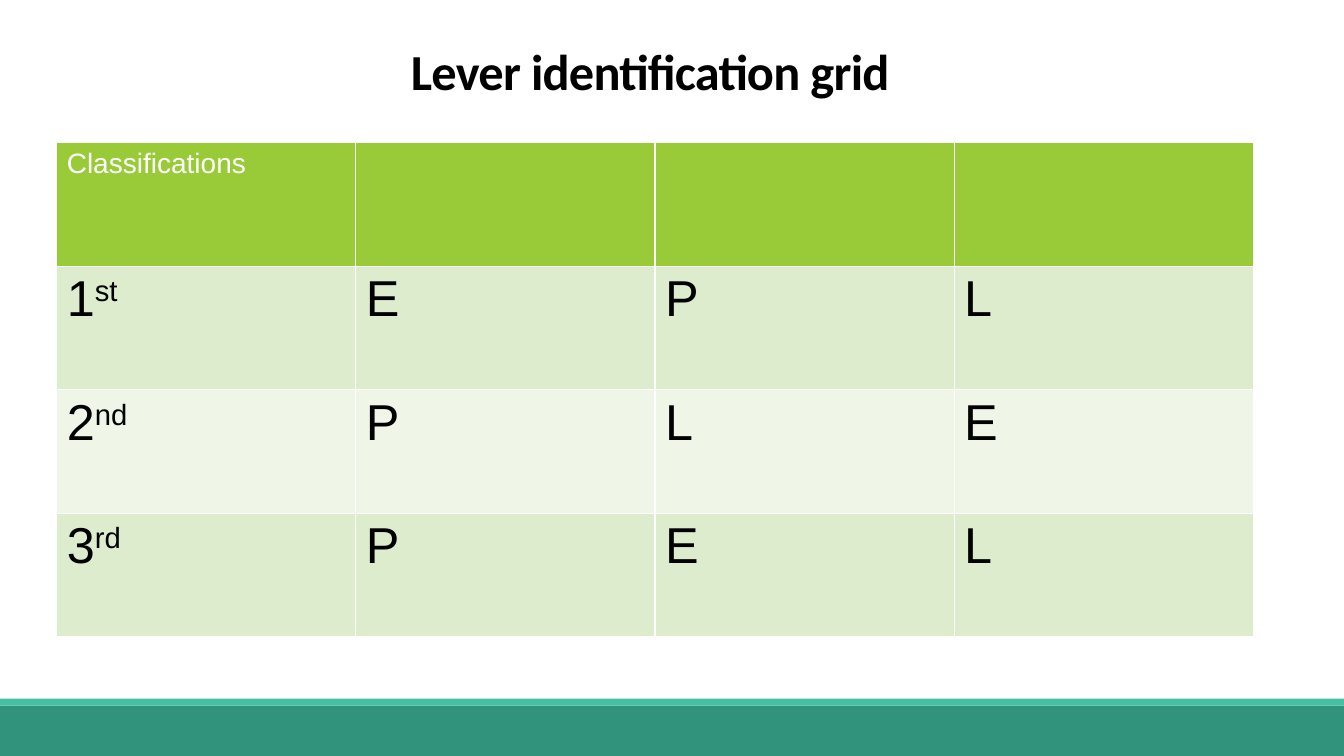
from lxml.etree import SubElement
from pptx import Presentation
from pptx.dml.color import RGBColor as RGB
from pptx.enum.shapes import MSO_SHAPE as Shape
from pptx.enum.text import MSO_ANCHOR as Anchor, PP_ALIGN as Align
from pptx.oxml.ns import qn
from pptx.util import Pt

COLORS = {
    "white": "FFFFFF", "black": "000000",
    "band": "31937B", "stripe": "44C1A3",
    "head": "99CB38", "odd": "DEECCE", "even": "EFF6E8",
}
WIDTH, HEIGHT = 960, 540
GRID = [
    ["Classifications", "", "", ""],
    [("1", "st"), "E", "P", "L"],
    [("2", "nd"), "P", "L", "E"],
    [("3", "rd"), "P", "E", "L"],
]


def color(name):
    return RGB.from_string(COLORS[name])


def add_title(slide, text, left, top, width, height):
    title = slide.shapes.title
    title.left, title.top = Pt(left), Pt(top)
    title.width, title.height = Pt(width), Pt(height)
    frame = title.text_frame
    frame.text = text
    frame.word_wrap = True
    frame.vertical_anchor = Anchor.BOTTOM
    para = frame.paragraphs[0]
    para.alignment = Align.CENTER
    para.line_spacing = 0.85
    font = para.runs[0].font
    font.name, font.size, font.bold = "Calibri", Pt(36), True
    font.color.rgb = color("black")
    para.runs[0]._r.get_or_add_rPr().set("spc", "-50")


def add_footer(slide, left, top, width, height, stripe=5):
    """Draw the bottom band with a thin stripe along its top."""
    parts = [("band", top + stripe, height - stripe), ("stripe", top, stripe)]
    for name, y, tall in parts:
        bar = slide.shapes.add_shape(
            Shape.RECTANGLE, Pt(left), Pt(y), Pt(width), Pt(tall))
        bar.shadow.inherit = False
        bar.fill.solid()
        bar.fill.fore_color.rgb = color(name)
        bar.line.fill.background()


def set_border(cell):
    props = cell._tc.get_or_add_tcPr()
    for side in ("lnL", "lnR", "lnT", "lnB"):
        line = SubElement(props, qn("a:" + side), w=str(Pt(1)))
        fill = SubElement(line, qn("a:solidFill"))
        SubElement(fill, qn("a:srgbClr"), val=COLORS["white"])


def fill_cell(cell, value, size, ink, back):
    """Style a cell; a pair of strings is a base and its superscript."""
    set_border(cell)
    cell.fill.solid()
    cell.fill.fore_color.rgb = color(back)
    base, above = value if isinstance(value, tuple) else (value, "")
    cell.text_frame.text = base
    para = cell.text_frame.paragraphs[0]
    if above:
        run = para.add_run()
        run.text = above
        run._r.get_or_add_rPr().set("baseline", "30000")
    para.font.size = Pt(size)
    for run in para.runs:
        run.font.name, run.font.size = "Arial", Pt(size)
        run.font.color.rgb = color(ink)


def add_grid(slide, rows, left, top, width, height):
    table = slide.shapes.add_table(
        len(rows), len(rows[0]),
        Pt(left), Pt(top), Pt(width), Pt(height)).table
    for r, row in enumerate(rows):
        if r == 0:
            style = (20, "white", "head")
        else:
            style = (36, "black", "odd" if r % 2 else "even")
        for c, value in enumerate(row):
            fill_cell(table.cell(r, c), value, *style)


def main():
    deck = Presentation()
    deck.slide_width, deck.slide_height = Pt(WIDTH), Pt(HEIGHT)
    slide = deck.slides.add_slide(deck.slide_layouts[5])
    add_footer(slide, 0, 499, WIDTH, HEIGHT - 499)
    add_title(slide, "Lever identification grid", 126, 7.2, 676.8, 68.4)
    add_grid(slide, GRID, 40.5, 102, 854.8, 352.8)
    deck.save("out.pptx")


if __name__ == "__main__":
    main()
